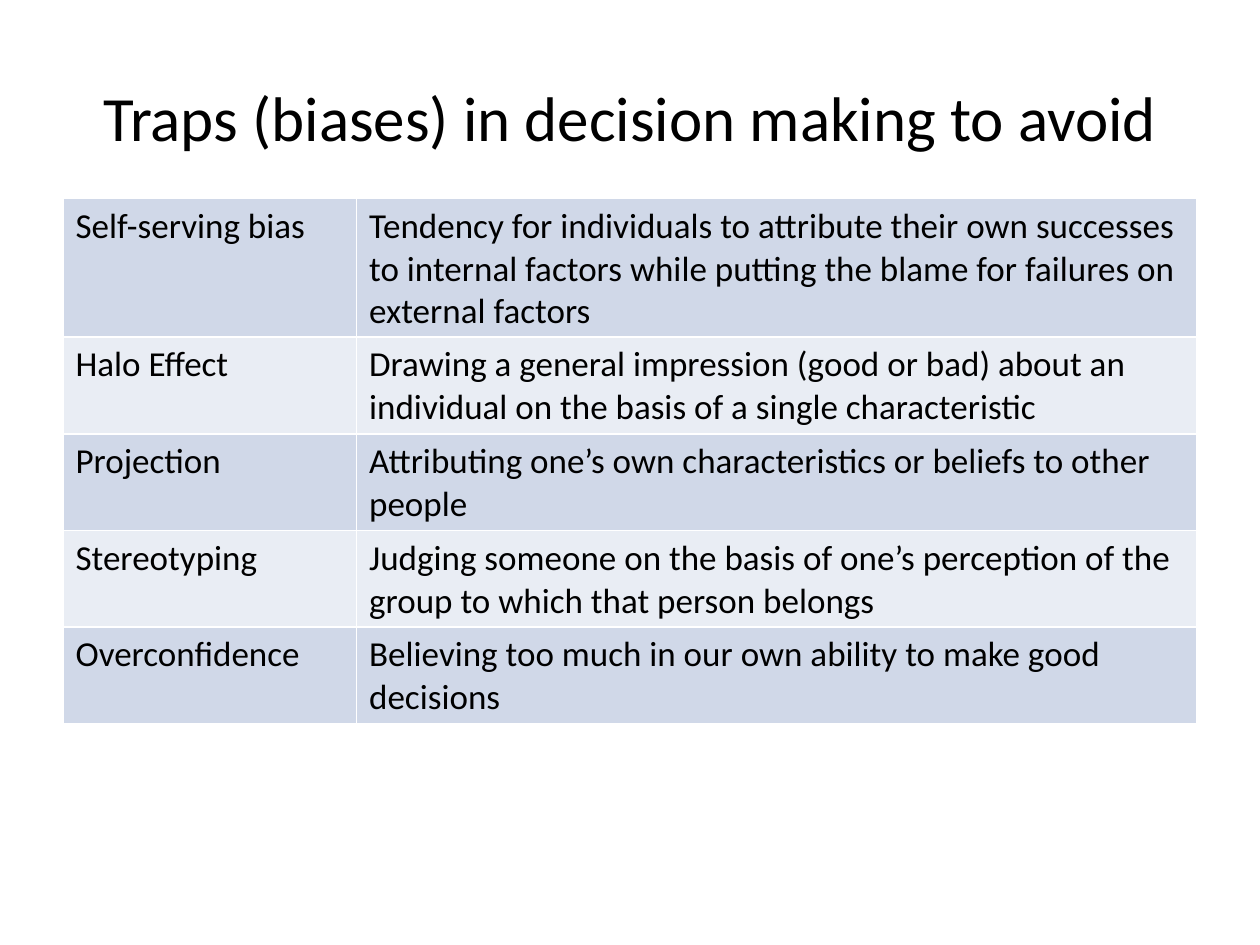
from lxml import etree
from pptx import Presentation
from pptx.dml.color import RGBColor
from pptx.enum.text import MSO_ANCHOR, PP_ALIGN
from pptx.oxml.ns import qn
from pptx.util import Inches, Pt

CENTER, LEFT = PP_ALIGN.CENTER, PP_ALIGN.LEFT
MIDDLE, TOP = MSO_ANCHOR.MIDDLE, MSO_ANCHOR.TOP
BLANK_LAYOUT = 6

TITLE = "Traps (biases) in decision making to avoid"
BIASES = [
    ("Self-serving bias",
     "Tendency for individuals to attribute their own successes to internal "
     "factors while putting the blame for failures on external factors"),
    ("Halo Effect",
     "Drawing a general impression (good or bad) about an individual on the "
     "basis of a single characteristic"),
    ("Projection",
     "Attributing one’s own characteristics or beliefs to other people"),
    ("Stereotyping",
     "Judging someone on the basis of one’s perception of the group to which "
     "that person belongs"),
    ("Overconfidence",
     "Believing too much in our own ability to make good decisions"),
]


def color(hex_value):
    return RGBColor.from_string(hex_value)


def write(frame, text, size=20, font="Calibri", ink="000000", align=LEFT):
    paragraph = frame.paragraphs[0]
    paragraph.alignment = align
    run = paragraph.add_run()
    run.text = text
    run.font.size = Pt(size)
    run.font.name = font
    run.font.color.rgb = color(ink)


class Deck:
    """Style and current slide; lengths are shares of the slide's size."""
    BANDS = ("D0D8E8", "E9EDF4")
    BORDER = "FFFFFF"

    def __init__(self, width=10, height=7.5):
        self.presentation = Presentation()
        self.presentation.slide_width = self.width = Inches(width)
        self.presentation.slide_height = self.height = Inches(height)
        layout = self.presentation.slide_layouts[BLANK_LAYOUT]
        self.slide = self.presentation.slides.add_slide(layout)

    def box(self, left, top, width, height):
        return (round(left * self.width), round(top * self.height),
                round(width * self.width), round(height * self.height))

    def title(self, text, *place):
        heading = self.slide.shapes.add_textbox(*self.box(*place))
        heading.text_frame.word_wrap = True
        heading.text_frame.vertical_anchor = MIDDLE
        write(heading.text_frame, text, size=36, align=CENTER)

    def border(self, cell, width=1):
        properties = cell._tc.get_or_add_tcPr()
        for position, side in enumerate(("lnL", "lnR", "lnT", "lnB")):
            line = etree.Element(qn(f"a:{side}"), w=str(Pt(width)))
            fill = etree.SubElement(line, qn("a:solidFill"))
            etree.SubElement(fill, qn("a:srgbClr"), val=self.BORDER)
            properties.insert(position, line)

    def table(self, rows, column_shares, row_share, *place):
        left, top, width, height = self.box(*place)
        frame = self.slide.shapes.add_table(
            len(rows), len(column_shares), left, top, width, height)
        grid = frame.table
        grid.first_row = False
        for column, share in zip(grid.columns, column_shares):
            column.width = round(share * self.width)
        for index, (row, texts) in enumerate(zip(grid.rows, rows)):
            row.height = round(row_share * self.height)
            for cell, text in zip(row.cells, texts):
                cell.fill.solid()
                cell.fill.fore_color.rgb = color(self.BANDS[index % 2])
                cell.vertical_anchor = TOP
                write(cell.text_frame, text)
                self.border(cell)
        # Rows are minimum heights that grow with their text
        frame.height = height

    def save(self):
        self.presentation.save("out.pptx")


def main():
    deck = Deck()
    # Heading
    deck.title(TITLE, 0.05, 0.04, 0.9, 1 / 6)
    # Biases and their meanings
    deck.table(BIASES, (0.233, 0.667), 0.055, 0.05, 0.21, 0.9, 0.556)
    deck.save()


if __name__ == "__main__":
    main()
